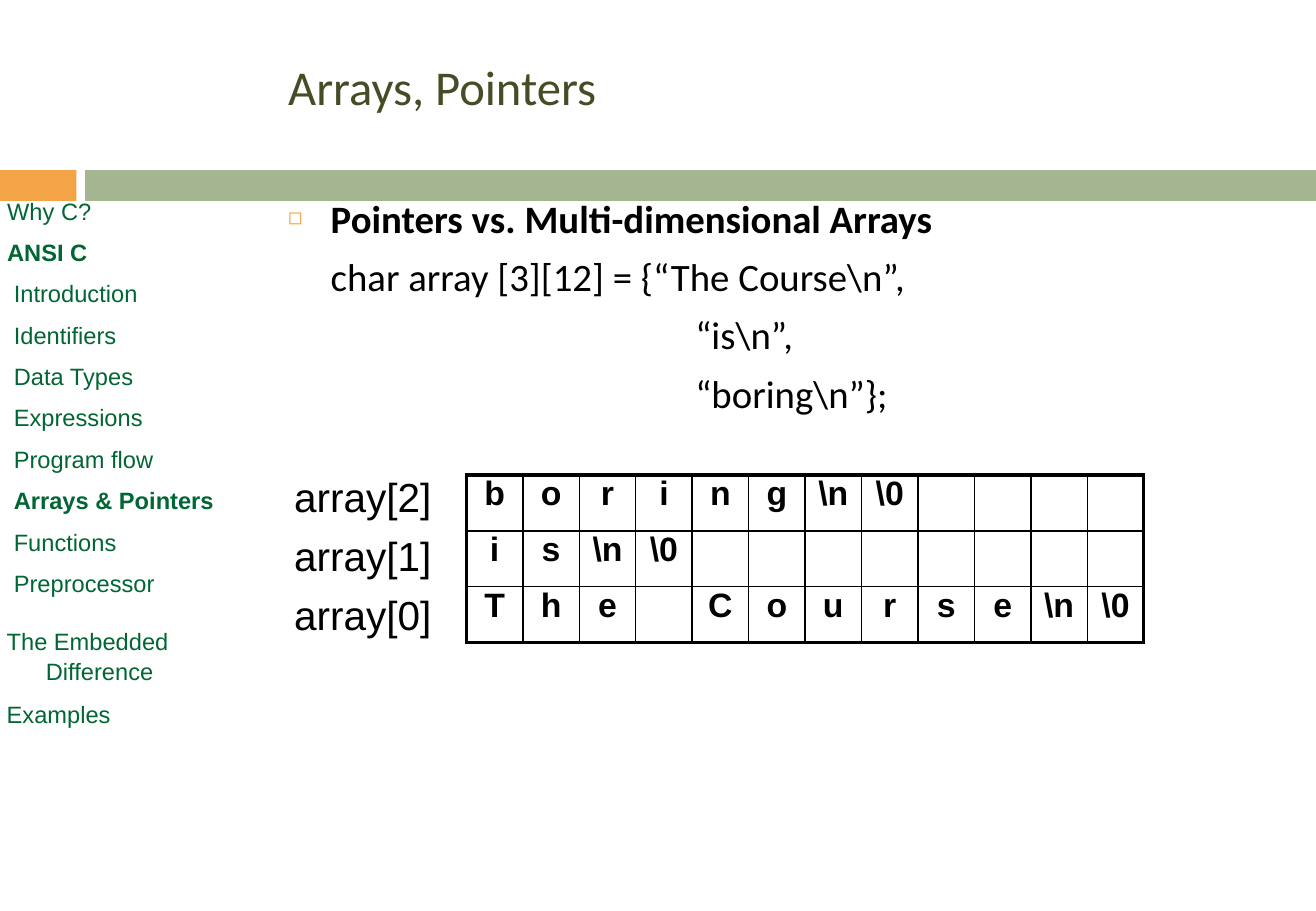
from lxml import etree
from pptx import Presentation, util as u
from pptx.dml.color import RGBColor
from pptx.enum import shapes, text
from pptx.oxml import ns

ORANGE, SAGE, OLIVE = "F3A447", "A5B592", "444D26"
GREEN, BLACK = "006633", "000000"
COLUMNS = 12


def rgb(value):
    return RGBColor.from_string(value)


def place(sp, box):
    sp.left, sp.top, sp.width, sp.height = (u.Cm(v) for v in box)


def style(p, size, color, font="Arial", bold=False, before=0, align=text.PP_ALIGN.LEFT):
    p.alignment = align
    p.space_before = u.Pt(before)
    for r in p.runs:
        f = r.font
        f.name, f.size, f.bold = font, u.Pt(size), bold
        f.color.rgb = rgb(color)


def indent(p, margin, first=0):
    pPr = p._p.get_or_add_pPr()
    pPr.set("marL", str(u.Cm(margin)))
    pPr.set("indent", str(u.Cm(first)))


def add_xml(parent, tag, **attrs):
    child = etree.SubElement(parent, ns.qn(tag))
    for name, value in attrs.items():
        child.set(name, str(value))
    return child


def set_lines(tf, lines):
    tf.text = lines[0]
    for line in lines[1:]:
        tf.add_paragraph().text = line
    return tf.paragraphs


def text_box(s, box, lines, wrap=True):
    sp = s.shapes.add_textbox(*(u.Cm(v) for v in box))
    tf = sp.text_frame
    tf.word_wrap = wrap
    tf.margin_left = tf.margin_top = tf.margin_right = tf.margin_bottom = 0
    return set_lines(tf, lines)


def bars(s, box):
    """Orange block and sage band, behind the text."""
    left, top, width, height = box
    for x, w, color in ((left, 1.6, ORANGE), (left + 1.78, width - 1.78, SAGE)):
        sp = s.shapes.add_shape(shapes.MSO_SHAPE.RECTANGLE,
                                u.Cm(x), u.Cm(top), u.Cm(w), u.Cm(height))
        sp.shadow.inherit = False
        sp.fill.solid()
        sp.fill.fore_color.rgb = rgb(color)
        sp.line.fill.background()
        s.shapes.title.element.addprevious(sp.element)


def title(s, box):
    sp = s.shapes.title
    place(sp, box)
    tf = sp.text_frame
    tf.text = "Arrays, Pointers"
    tf.auto_size = text.MSO_AUTO_SIZE.NONE
    tf.vertical_anchor = text.MSO_ANCHOR.MIDDLE
    style(tf.paragraphs[0], 28.8, OLIVE, "Calibri")


def body(s, box):
    """Bulleted heading followed by the array declaration."""
    sp = s.placeholders[1]
    place(sp, box)
    tf = sp.text_frame
    tf.auto_size = text.MSO_AUTO_SIZE.NONE
    paragraphs = set_lines(tf, ["Pointers vs. Multi-dimensional Arrays",
                                "char array [3][12] = {“The Course\\n”,",
                                "“is\\n”,", "“boring\\n”};"])
    for i, (p, margin) in enumerate(zip(paragraphs, (0.89, 0.89, 8.51, 8.51))):
        style(p, 23, BLACK, "Calibri", bold=i == 0, before=7)
        indent(p, margin, -0.89 if i == 0 else 0)
        pPr = p._p.get_or_add_pPr()
        if i == 0:
            add_xml(add_xml(pPr, "a:buClr"), "a:srgbClr", val=ORANGE)
            add_xml(pPr, "a:buSzPct", val=60000)
            add_xml(pPr, "a:buChar", char="◻")
        else:
            add_xml(pPr, "a:buNone")


def border(cell, side, width):
    ln = add_xml(cell._tc.get_or_add_tcPr(), f"a:ln{side}", w=u.Pt(width))
    add_xml(add_xml(ln, "a:solidFill"), "a:srgbClr", val=BLACK)


def memory_table(s, box):
    """One character per cell, thick outer frame."""
    words = ("boring", "is", "The Course")
    table = s.shapes.add_table(len(words), COLUMNS, *(u.Cm(v) for v in box)).table
    table.first_row = table.horz_banding = False
    for column in table.columns:
        column.width = u.Cm(box[2] / COLUMNS)
    for i, word in enumerate(words):
        table.rows[i].height = u.Cm(box[3] / len(words))
        chars = list(word) + ["\\n", "\\0"]
        for j in range(COLUMNS):
            cell = table.cell(i, j)
            cell.margin_left = cell.margin_top = cell.margin_right = cell.margin_bottom = 0
            outer = {"L": j == 0, "R": j == COLUMNS - 1,
                     "T": i == 0, "B": i == len(words) - 1}
            for side, thick in outer.items():
                border(cell, side, 2.25 if thick else 1)
            cell.fill.background()
            if j < len(chars) and chars[j].strip():
                cell.text = chars[j]
                style(cell.text_frame.paragraphs[0], 20, BLACK, bold=True,
                      align=text.PP_ALIGN.CENTER)


def row_labels(s, box):
    for p in text_box(s, box, [f"array[{i}]" for i in (2, 1, 0)], wrap=False):
        style(p, 24, BLACK, before=6)


def outline(s, box):
    """Course outline with the current chapter in bold."""
    chapters = ["Why C?", "ANSI C"]
    topics = ["Introduction", "Identifiers", "Data Types", "Expressions",
              "Program flow", "Arrays & Pointers", "Functions", "Preprocessor"]
    for p in text_box(s, box, chapters + topics):
        style(p, 14, GREEN, bold=p.text in ("ANSI C", "Arrays & Pointers"), before=7.7)
        indent(p, 0.14 if p.text in topics else 0)


def outline_end(s, box):
    paragraphs = text_box(s, box, ["The Embedded", "Difference", "Examples"])
    for p, margin, before in zip(paragraphs, (0.14, 0.96, 0.14), (0, 1, 8.4)):
        style(p, 14, GREEN, before=before)
        indent(p, margin)


def main():
    prs = Presentation()
    prs.slide_width, prs.slide_height = u.Cm(27.51), u.Cm(19.05)
    s = prs.slides.add_slide(prs.slide_layouts[1])
    bars(s, (0, 3.56, 27.51, 0.64))
    title(s, (5.77, 1.3, 19.23, 1.02))
    body(s, (5.77, 3.94, 19.23, 4.83))
    memory_table(s, (9.75, 9.93, 14.16, 3.51))
    row_labels(s, (6.15, 9.88, 2.87, 3.45))
    outline(s, (0.15, 4.11, 4.75, 8.69))
    outline_end(s, (0, 13.11, 4.75, 2.08))
    prs.save("out.pptx")


if __name__ == "__main__":
    main()
